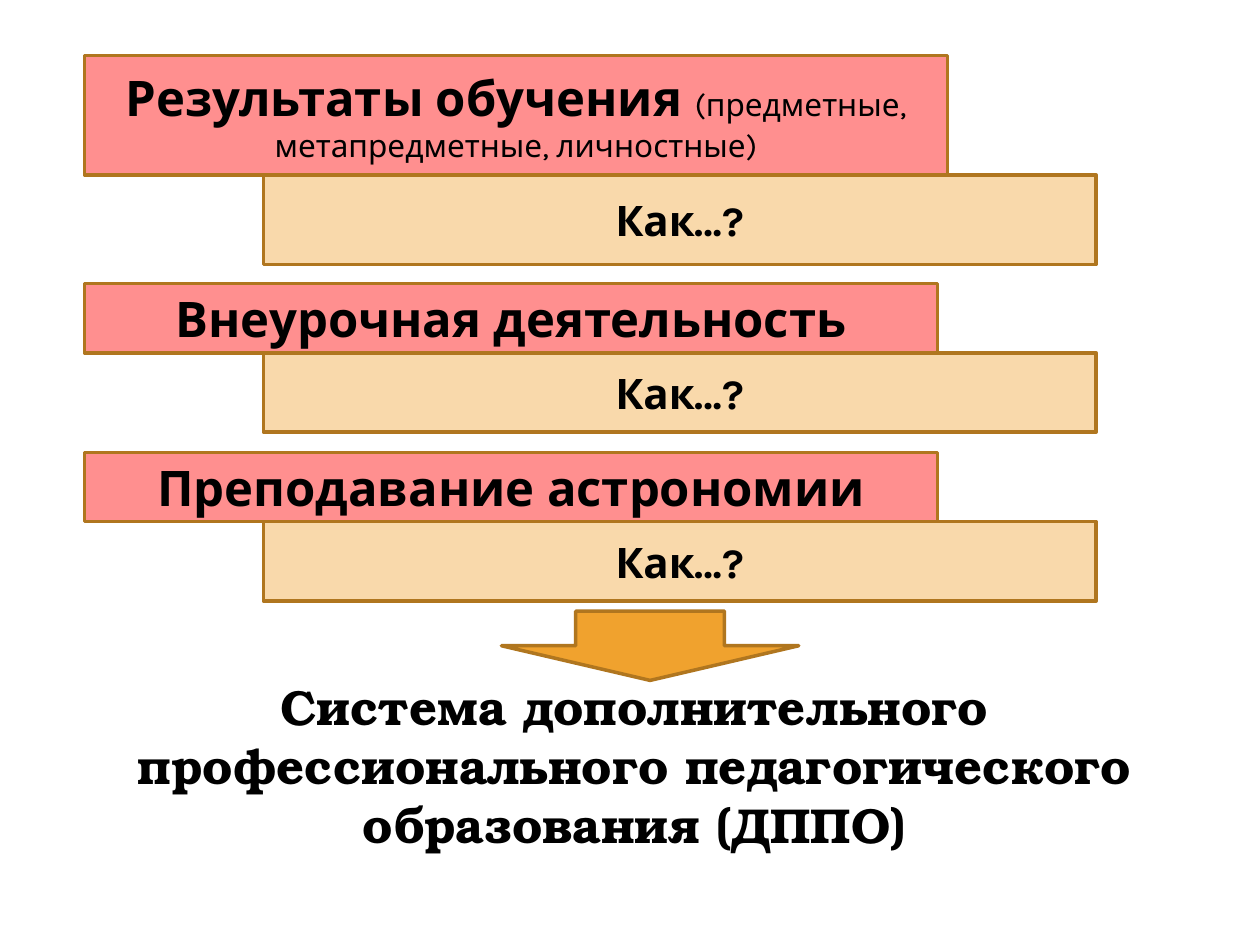
"""Build a slide of three topics, each with a question, leading to a conclusion."""
from lxml import etree
from pptx import Presentation
from pptx.dml.color import RGBColor
from pptx.enum.shapes import MSO_SHAPE
from pptx.enum.text import MSO_ANCHOR, MSO_AUTO_SIZE, PP_ALIGN
from pptx.oxml.ns import qn
from pptx.util import Inches, Pt

RECTANGLE = MSO_SHAPE.RECTANGLE
DOWN_ARROW = MSO_SHAPE.DOWN_ARROW
MIDDLE = MSO_ANCHOR.MIDDLE
CENTER = PP_ALIGN.CENTER
GROW = MSO_AUTO_SIZE.SHAPE_TO_FIT_TEXT

COLORS = {"topic": "FF0000", "amber": "F0A22E", "outline": "B0761F", "text": "000000"}
BODY_FONT = "Karla"
CONCLUSION_FONT = "TeX Gyre Bonum"


class SlideBuilder:
    """Hold the slide and its style, and draw each kind of element."""

    def __init__(self, slide):
        self.slide = slide

    def color(self, key):
        return RGBColor.from_string(COLORS[key])

    def style(self, font, size, bold=True, name=BODY_FONT):
        font.name = name
        font.size = Pt(size)
        font.bold = bold
        font.color.rgb = self.color("text")

    def block(self, kind, left, top, width, height, fill, opacity=100):
        block = self.slide.shapes.add_shape(
            kind, Inches(left), Inches(top), Inches(width), Inches(height))
        block.shadow.inherit = False
        block.fill.solid()
        block.fill.fore_color.rgb = self.color(fill)
        block.line.color.rgb = self.color("outline")
        block.line.width = Pt(2)
        if opacity < 100:
            fill_color = block._element.spPr.find(qn("a:solidFill"))[0]
            etree.SubElement(fill_color, qn("a:alpha"), val=str(opacity * 1000))
        return block

    def centered(self, frame, text):
        frame.word_wrap = True
        paragraph = frame.paragraphs[0]
        paragraph.alignment = CENTER
        paragraph.add_run().text = text
        return paragraph

    def label(self, block, text, size):
        block.text_frame.vertical_anchor = MIDDLE
        paragraph = self.centered(block.text_frame, text)
        self.style(paragraph.font, size)
        return paragraph

    def topic(self, top, width, height, text, detail):
        bar = self.block(RECTANGLE, 0.67, top, width, height, "topic", 44)
        if not detail:
            self.label(bar, text, 28)
            return
        bar.text_frame.vertical_anchor = MIDDLE
        paragraph = self.centered(bar.text_frame, text + " ")
        self.style(paragraph.runs[0].font, 28)
        detail_run = paragraph.add_run()
        detail_run.text = detail
        self.style(detail_run.font, 18, bold=False)

    def question(self, top, height):
        bar = self.block(RECTANGLE, 2.09, top, 6.61, height, "amber", 40)
        self.label(bar, "Как…?", 24)

    def conclusion(self, text):
        box = self.slide.shapes.add_textbox(
            Inches(0.43), Inches(5.32), Inches(9.21), Inches(1.52))
        paragraph = self.centered(box.text_frame, text)
        box.text_frame.auto_size = GROW
        self.style(paragraph.font, 28, name=CONCLUSION_FONT)


def main():
    presentation = Presentation()
    presentation.slide_width = Inches(10)
    presentation.slide_height = Inches(7.5)
    builder = SlideBuilder(presentation.slides.add_slide(presentation.slide_layouts[6]))

    topics = [
        (0.44, 6.85, 0.95, 0.71, "Результаты обучения",
         "(предметные, метапредметные, личностные)"),
        (2.25, 6.77, 0.55, 0.63, "Внеурочная деятельность", ""),
        (3.59, 6.77, 0.55, 0.63, "Преподавание астрономии", ""),
    ]
    for top, width, height, question_height, text, detail in topics:
        builder.topic(top, width, height, text, detail)
        builder.question(top + height, question_height)

    builder.block(DOWN_ARROW, 3.98, 4.85, 2.36, 0.55, "amber")
    builder.conclusion(
        "Система дополнительного профессионального педагогического образования (ДППО)")
    presentation.save("out.pptx")


if __name__ == "__main__":
    main()
